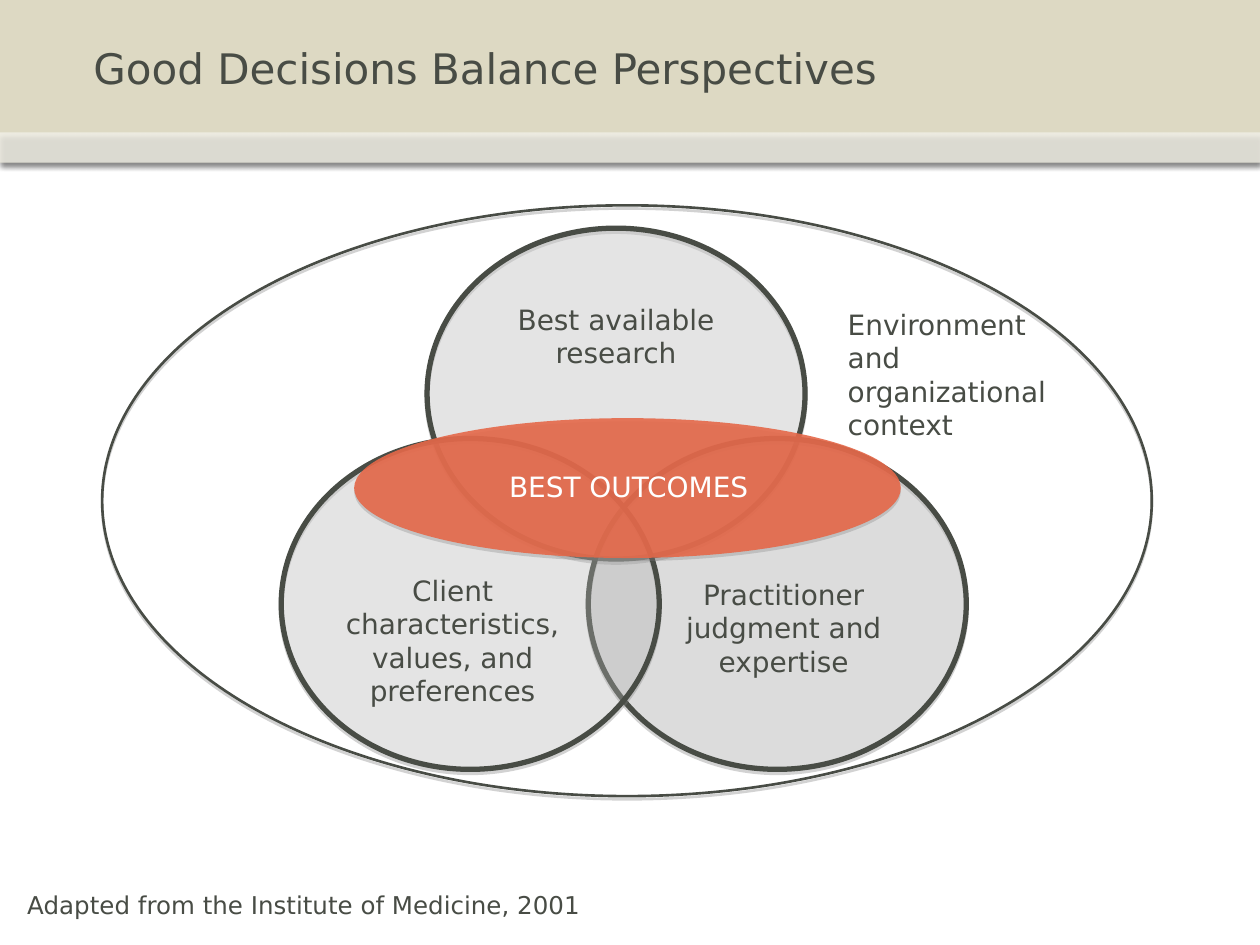
from dataclasses import dataclass

from lxml.etree import SubElement
from pptx import Presentation
from pptx.dml.color import RGBColor
from pptx.enum.shapes import MSO_SHAPE
from pptx.enum.text import MSO_ANCHOR, MSO_AUTO_SIZE, PP_ALIGN
from pptx.oxml.ns import qn
from pptx.util import Cm, Pt


@dataclass(frozen=True)
class Theme:
    font: str = "DejaVu Sans"
    ink: str = "484C45"
    white: str = "FFFFFF"
    sand: str = "DDD9C3"
    light_gray: str = "BFBFBF"
    mid_gray: str = "A6A6A6"
    coral: str = "E56849"
    black: str = "000000"
    shadow_gray: str = "808080"
    title_size: int = 24
    label_size: int = 16
    source_size: int = 14


@dataclass(frozen=True)
class Box:
    """A region in centimetres."""
    left: float
    top: float
    width: float
    height: float

    def inner(self, left, top, width, height):
        return Box(self.left + left, self.top + top, width, height)

    def lengths(self):
        return [Cm(n) for n in (self.left, self.top, self.width, self.height)]


THEME = Theme()


def add_alpha(color, percent):
    SubElement(color, qn("a:alpha"), val=str(percent * 1000))


def add_shadow(shape, color, blur):
    shape.shadow.inherit = False
    effects = shape.element.spPr.find(qn("a:effectLst"))
    outer = SubElement(effects, qn("a:outerShdw"), blurRad=str(Pt(blur)),
                       dist=str(Pt(1.8)), dir="5400000", rotWithShape="0")
    add_alpha(SubElement(outer, qn("a:srgbClr"), val=color), 35)


def add_form(shapes, kind, box, fill=None, opacity=100, line_width=0,
             shadow=THEME.shadow_gray, blur=0):
    shape = shapes.add_shape(kind, *box.lengths())
    if fill:
        shape.fill.solid()
        shape.fill.fore_color.rgb = RGBColor.from_string(fill)
        if opacity < 100:
            add_alpha(shape.element.spPr.find(".//" + qn("a:srgbClr")), opacity)
    else:
        shape.fill.background()
    if line_width:
        shape.line.color.rgb = RGBColor.from_string(THEME.ink)
        shape.line.width = Pt(line_width)
    else:
        shape.line.fill.background()
    add_shadow(shape, shadow, blur)
    return shape


def write(shape, text, size, color=THEME.ink, align=PP_ALIGN.LEFT):
    frame = shape.text_frame
    frame.text = text
    for para in frame.paragraphs:
        para.alignment = align
        for span in para.runs:
            span.font.name = THEME.font
            span.font.size = Pt(size)
            span.font.color.rgb = RGBColor.from_string(color)


def add_label(shapes, box, text, size=THEME.label_size, color=THEME.ink,
              align=PP_ALIGN.CENTER, wrap=True):
    label = shapes.add_textbox(*box.lengths())
    label.text_frame.word_wrap = wrap
    label.text_frame.auto_size = MSO_AUTO_SIZE.SHAPE_TO_FIT_TEXT
    write(label, text, size, color, align)


def build_header(page, box):
    title = page.shapes.title
    strip_height = 0.61
    strip = box.inner(0, box.height - strip_height, box.width, strip_height)
    # Bands go behind the title
    for band_box, fill, opacity in ((box, THEME.sand, 100),
                                    (strip, THEME.white, 53)):
        band = add_form(page.shapes, MSO_SHAPE.RECTANGLE, band_box, fill,
                        opacity, shadow=THEME.black, blur=3.1)
        title.element.addprevious(band.element)
    title.left, title.top, title.width, title.height = box.inner(
        1.63, 0.03, 22.02, 2.67).lengths()
    title.text_frame.vertical_anchor = MSO_ANCHOR.MIDDLE
    write(title, "Good Decisions Balance Perspectives", THEME.title_size)


def build_diagram(page, box):
    shapes = page.shapes.add_group_shape().shapes

    # Three overlapping perspectives
    for left, top, fill, opacity in ((6.55, 0.46, THEME.light_gray, 27),
                                     (9.8, 4.7, THEME.mid_gray, 28),
                                     (3.61, 4.7, THEME.light_gray, 27)):
        add_form(shapes, MSO_SHAPE.OVAL, box.inner(left, top, 7.62, 6.67),
                 fill, opacity, line_width=3)
    add_label(shapes, box.inner(7.82, 1.83, 5.08, 1.63),
              "Best available research")
    add_label(shapes, box.inner(11.2, 7.37, 5.08, 2.31),
              "Practitioner\njudgment and\nexpertise")
    add_label(shapes, box.inner(4.17, 7.29, 5.79, 3),
              "Client characteristics, values, and preferences")

    # Shared outcome in the middle
    add_form(shapes, MSO_SHAPE.FLOWCHART_CONNECTOR,
             box.inner(5.08, 4.29, 11.02, 2.82), THEME.coral, 90)
    add_label(shapes, box.inner(6.22, 5.21, 8.79, 0.94), "BEST OUTCOMES",
              color=THEME.white)

    # Surrounding context
    add_form(shapes, MSO_SHAPE.FLOWCHART_CONNECTOR, box, line_width=1.5)
    add_label(shapes, box.inner(14.78, 1.93, 4.75, 3),
              "Environment and\norganizational context", align=PP_ALIGN.LEFT)


def build_source(page, box):
    add_label(page.shapes, box, "Adapted from the Institute of Medicine, 2001",
              THEME.source_size, align=PP_ALIGN.LEFT, wrap=False)


def main():
    deck = Presentation()
    deck.slide_width, deck.slide_height = Cm(25.4), Cm(19.05)
    page = deck.slides.add_slide(deck.slide_layouts[5])
    build_header(page, Box(0, 0, 25.4, 3.28))
    build_diagram(page, Box(2.06, 4.14, 21.16, 11.91))
    build_source(page, Box(0.3, 17.81, 11.84, 0.86))
    deck.save("out.pptx")


if __name__ == "__main__":
    main()
